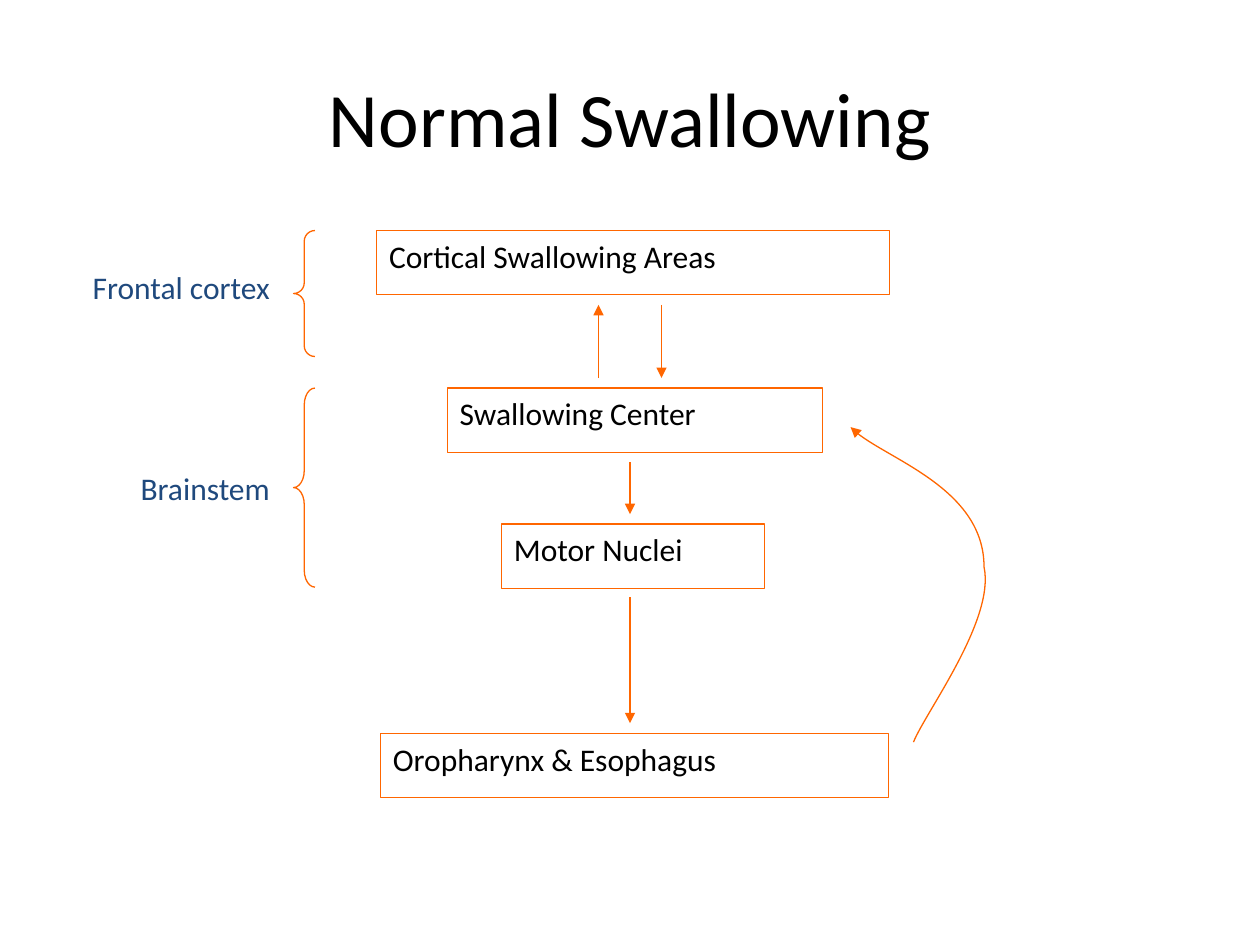
"""Build the Normal Swallowing pathway slide."""
from dataclasses import dataclass

from lxml import etree
from pptx import Presentation
from pptx.dml.color import RGBColor
from pptx.enum import shapes, text
from pptx.oxml.ns import qn
from pptx.util import Inches, Pt


@dataclass(frozen=True)
class Theme:
    font: str = "Calibri"
    ink: RGBColor = RGBColor(0x00, 0x00, 0x00)
    label: RGBColor = RGBColor(0x1F, 0x49, 0x7D)
    accent: RGBColor = RGBColor(0xFF, 0x66, 0x00)
    title_size: Pt = Pt(44)
    body_size: Pt = Pt(18)
    line_width: Pt = Pt(0.75)


theme = Theme()


def write(shape, words, size, color, align):
    frame = shape.text_frame
    frame.word_wrap = True
    para = frame.paragraphs[0]
    para.text = words
    para.alignment = align
    para.font.name = theme.font
    para.font.size = size
    para.font.color.rgb = color
    return frame


def outline(shape, arrow=False):
    shape.line.color.rgb = theme.accent
    shape.line.width = theme.line_width
    if arrow:
        etree.SubElement(shape.line._get_or_add_ln(), qn("a:tailEnd"), type="triangle")


deck = Presentation()
deck.slide_width, deck.slide_height = Inches(10), Inches(7.5)
page = deck.slides.add_slide(deck.slide_layouts[5])

title = page.shapes.title
title.left, title.top, title.width, title.height = map(Inches, (0.5, 0.3, 9, 1.25))
frame = write(title, "Normal Swallowing", theme.title_size, theme.ink, text.PP_ALIGN.CENTER)
frame.vertical_anchor = text.MSO_ANCHOR.MIDDLE

stages = [
    ("Cortical Swallowing Areas", 2.99, 1.83, 4.07),
    ("Swallowing Center", 3.55, 3.08, 2.98),
    ("Motor Nuclei", 3.98, 4.16, 2.09),
    ("Oropharynx & Esophagus", 3.02, 5.82, 4.03),
]
for words, left, top, width in stages:
    box = page.shapes.add_shape(
        shapes.MSO_SHAPE.RECTANGLE, Inches(left), Inches(top), Inches(width), Inches(0.51))
    box.shadow.inherit = False
    box.fill.background()
    outline(box)
    frame = write(box, words, theme.body_size, theme.ink, text.PP_ALIGN.LEFT)
    frame.vertical_anchor = text.MSO_ANCHOR.TOP

for x, start, end in [(5, 3.67, 4.08), (4.75, 3, 2.42), (5, 4.74, 5.74), (5.25, 2.42, 3)]:
    arrow = page.shapes.add_connector(
        shapes.MSO_CONNECTOR.STRAIGHT, Inches(x), Inches(start), Inches(x), Inches(end))
    outline(arrow, arrow=True)
    etree.SubElement(arrow._element.spPr, qn("a:effectLst"))

regions = [
    ("Frontal cortex", 0.51, 2.08, 1.83, 1, 0.5),
    ("Brainstem", 0.92, 3.67, 3.08, 1.58, 0.79),
]
label_right = 2.24
for words, left, label_top, brace_top, height, curl in regions:
    brace = page.shapes.add_shape(
        shapes.MSO_SHAPE.LEFT_BRACE, Inches(2.33), Inches(brace_top), Inches(0.17), Inches(height))
    brace.adjustments[0] = curl
    brace.shadow.inherit = False
    brace.fill.background()
    outline(brace)
    label = page.shapes.add_textbox(
        Inches(left), Inches(label_top), Inches(label_right - left), Inches(0.4))
    write(label, words, theme.body_size, theme.label, text.PP_ALIGN.RIGHT)

feedback_points = [
    (7.25, 5.89), (7.34, 5.66), (7.9, 4.92), (7.81, 4.5),
    (7.81, 3.89), (6.97, 3.62), (6.75, 3.39),
]
start, *controls = [(Inches(x), Inches(y)) for x, y in feedback_points]
builder = page.shapes.build_freeform(*start)
builder.add_line_segments(controls, close=False)
feedback = builder.convert_to_shape()
feedback.shadow.inherit = False
feedback.fill.background()
outline(feedback, arrow=True)

segments = list(feedback._element.iter(qn("a:lnTo")))
route = segments[0].getparent()
for first in range(0, len(segments), 3):
    curve = etree.SubElement(route, qn("a:cubicBezTo"))
    for segment in segments[first:first + 3]:
        curve.append(segment[0])
        route.remove(segment)

deck.save("out.pptx")
